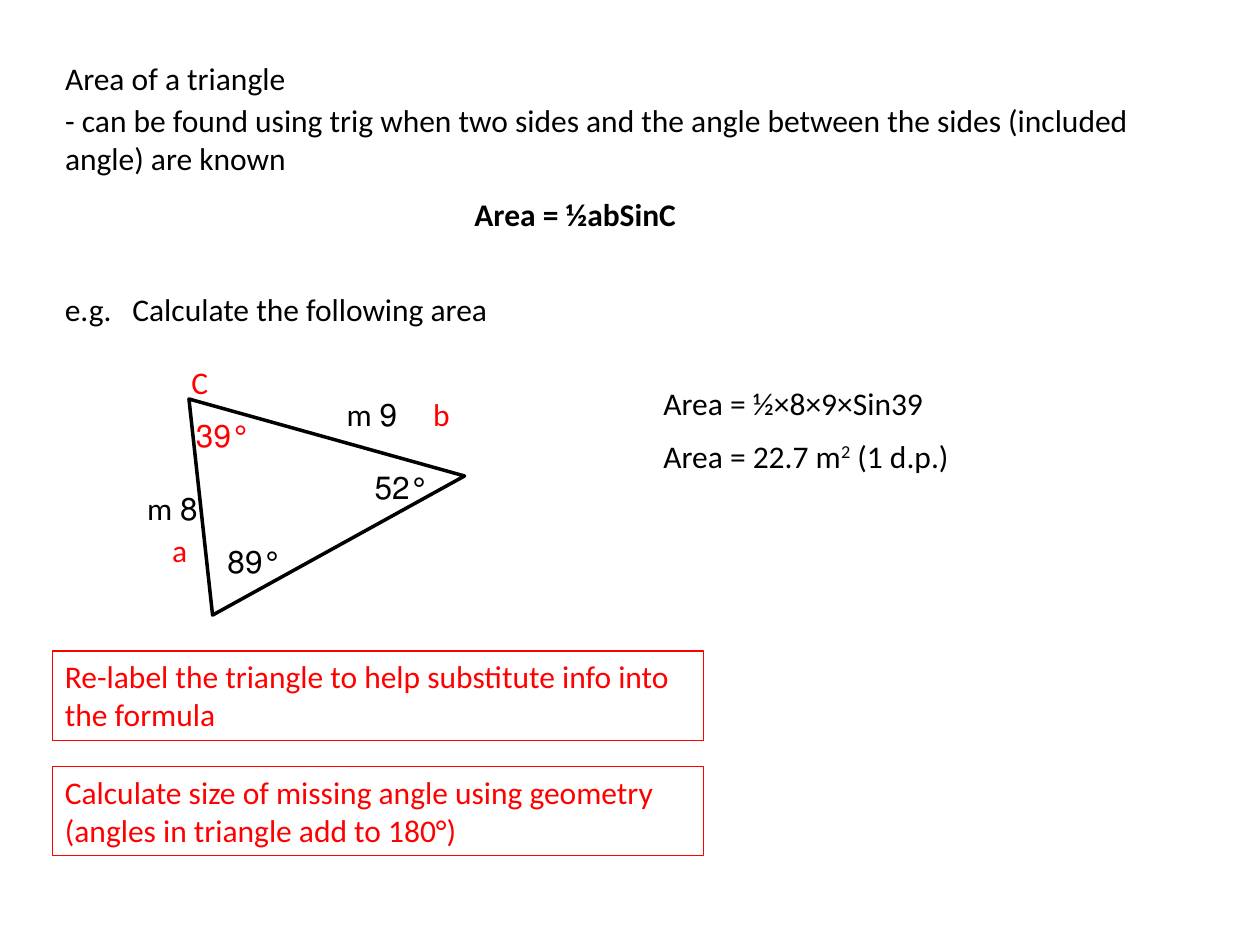
from dataclasses import dataclass

from lxml import etree
from pptx import Presentation
from pptx import util as u
from pptx.dml.color import RGBColor
from pptx.enum import shapes, text
from pptx.oxml import ns

Pt = u.Pt


@dataclass(frozen=True)
class Theme:
    ink: RGBColor = RGBColor(0, 0, 0)
    accent: RGBColor = RGBColor(255, 0, 0)
    font: str = "Calibri"
    size: float = 18
    outline: float = 2
    border: float = 0.75
    line_height: float = 29
    note_height: float = 51


THEME = Theme()


def place(shape, left, top, width, height):
    shape.left, shape.top = Pt(left), Pt(top)
    shape.width, shape.height = Pt(width), Pt(height)


def write(shape, content, color=THEME.ink, bold=False, wrap=True,
          anchor=text.MSO_ANCHOR.TOP):
    frame = shape.text_frame
    frame.text = content
    frame.word_wrap = wrap
    frame.auto_size = text.MSO_AUTO_SIZE.SHAPE_TO_FIT_TEXT
    frame.vertical_anchor = anchor
    paragraph = frame.paragraphs[0]
    paragraph.alignment = text.PP_ALIGN.LEFT
    paragraph.space_before = Pt(0)
    for run in paragraph.runs:
        style(run, color, bold)
    return paragraph


def style(run, color=THEME.ink, bold=False):
    run.font.name = THEME.font
    run.font.size = Pt(THEME.size)
    run.font.bold = bold
    run.font.color.rgb = color


def add_line(slide, content, left, top, width, **options):
    shape = slide.shapes.add_textbox(
        Pt(left), Pt(top), Pt(width), Pt(THEME.line_height))
    return write(shape, content, **options)


def set_indent(paragraph, margin, indent):
    properties = paragraph._p.get_or_add_pPr()
    properties.set("marL", str(Pt(margin)))
    properties.set("indent", str(Pt(indent)))
    return properties


def add_introduction(slide, left, top, width):
    title, body = slide.placeholders
    place(title, left, top, 142, THEME.line_height)
    write(title, "Area of a triangle", wrap=False)
    place(body, left, top + 24, width, THEME.note_height)
    paragraph = write(
        body,
        "- can be found using trig when two sides and the angle between "
        "the sides (included angle) are known",
        anchor=text.MSO_ANCHOR.MIDDLE)
    properties = set_indent(paragraph, 0, 0)
    etree.SubElement(properties, ns.qn("a:buNone"))
    add_line(slide, "Area = ½abSinC", left + 234, top + 78, 240, bold=True)
    example = add_line(slide, "e.g.\tCalculate the following area",
                       left, top + 132, 260)
    set_indent(example, 38.6, -38.6)


def add_triangle(slide, left, top):
    corners = [(36, 24), (49.5, 147.5), (193.5, 68)]
    points = [(Pt(left + x), Pt(top + y)) for x, y in corners]
    builder = slide.shapes.build_freeform(*points[0])
    builder.add_line_segments(points[1:], close=True)
    triangle = builder.convert_to_shape()
    triangle.shadow.inherit = False
    triangle.fill.background()
    triangle.line.color.rgb = THEME.ink
    triangle.line.width = Pt(THEME.outline)

    labels = [
        ("52°", 132, 60, 48, THEME.ink),
        ("89°", 48, 102, 48, THEME.ink),
        ("8 m", 0, 72, 48, THEME.ink),
        ("9 m", 114, 18, 48, THEME.ink),
        ("C", 12, 0, 42, THEME.accent),
        ("a", 6, 96, 36, THEME.accent),
        ("b", 156, 18, 36, THEME.accent),
        ("39°", 30, 30, 48, THEME.accent),
    ]
    for content, x, y, width, color in labels:
        paragraph = add_line(slide, content, left + x, top + y, width,
                             color=color)
        paragraph.alignment = text.PP_ALIGN.RIGHT
        paragraph._p.get_or_add_pPr().set("rtl", "1")


def add_working(slide, left, top, width):
    add_line(slide, "Area = ½×8×9×Sin39", left, top, width)
    result = add_line(slide, "Area = 22.7 m", left, top + 30, width)
    for content, baseline in (("2", "30000"), (" (1 d.p.)", "0")):
        run = result.add_run()
        run.text = content
        style(run)
        run._r.get_or_add_rPr().set("baseline", baseline)


def add_notes(slide, left, top, width):
    notes = [
        "Re-label the triangle to help substitute info into the formula",
        "Calculate size of missing angle using geometry "
        "(angles in triangle add to 180°)",
    ]
    for index, content in enumerate(notes):
        note = slide.shapes.add_shape(
            shapes.MSO_SHAPE.RECTANGLE, Pt(left), Pt(top + 66 * index),
            Pt(width), Pt(THEME.note_height))
        note.shadow.inherit = False
        note.fill.background()
        note.line.color.rgb = THEME.accent
        note.line.width = Pt(THEME.border)
        write(note, content, color=THEME.accent)


def main():
    presentation = Presentation()
    presentation.slide_width, presentation.slide_height = Pt(720), Pt(540)
    slide = presentation.slides.add_slide(presentation.slide_layouts[1])
    add_introduction(slide, 30, 30, 630)
    add_triangle(slide, 72, 204)
    add_working(slide, 372, 216, 240)
    add_notes(slide, 30, 372, 372)
    presentation.save("out.pptx")


if __name__ == "__main__":
    main()
